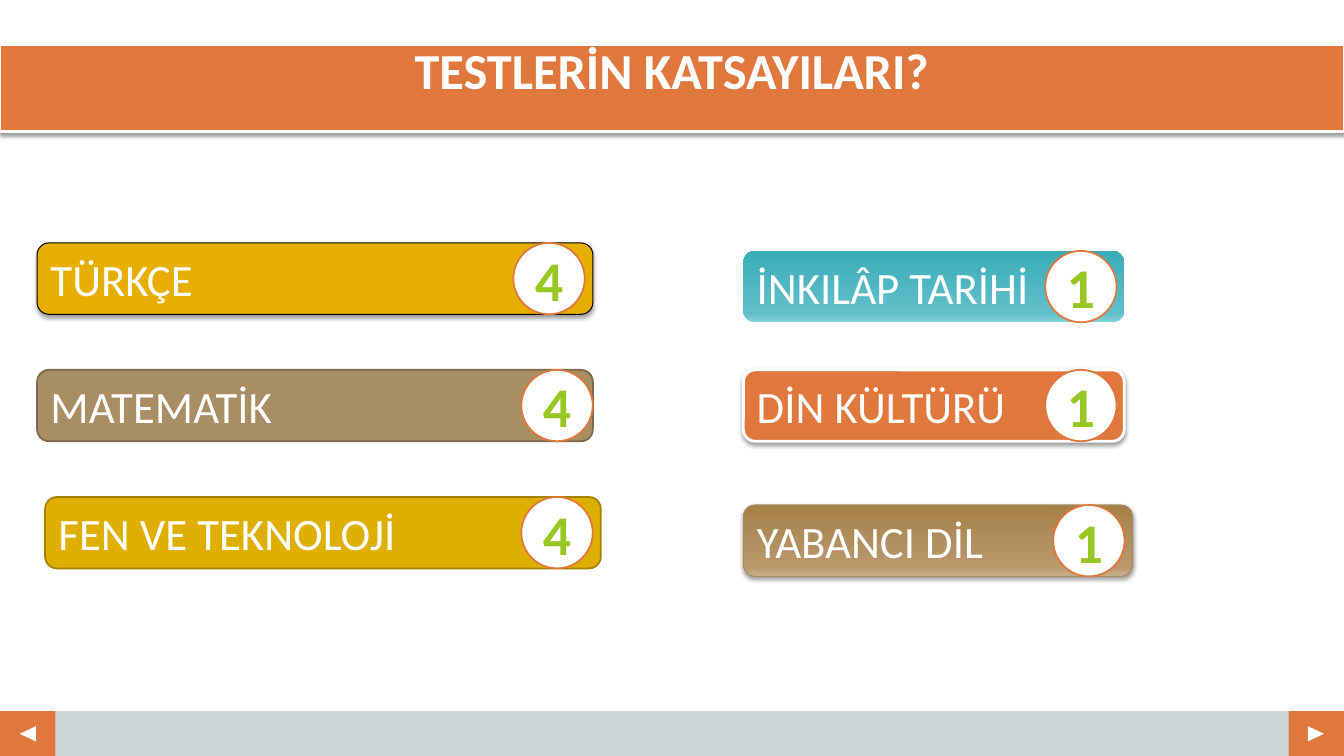
from lxml import etree
from pptx import Presentation
from pptx.dml.color import RGBColor
from pptx.enum.shapes import MSO_SHAPE
from pptx.enum.text import MSO_ANCHOR, MSO_AUTO_SIZE, PP_ALIGN
from pptx.oxml import parse_xml
from pptx.util import Pt

RECTANGLE = MSO_SHAPE.RECTANGLE
TRIANGLE = MSO_SHAPE.ISOSCELES_TRIANGLE
BAR = MSO_SHAPE.FLOWCHART_ALTERNATE_PROCESS
OVAL = MSO_SHAPE.OVAL
MIDDLE, TOP = MSO_ANCHOR.MIDDLE, MSO_ANCHOR.TOP
LEFT, CENTER = PP_ALIGN.LEFT, PP_ALIGN.CENTER

WHITE = RGBColor(0xFF, 0xFF, 0xFF)
BLACK = RGBColor(0x00, 0x00, 0x00)
ORANGE = RGBColor(0xE0, 0x77, 0x3C)
GREY = RGBColor(0xCC, 0xD7, 0xD9)
GREEN = RGBColor(0x98, 0xC7, 0x23)
AMBER = RGBColor(0xE6, 0xAF, 0x00)
TAN = RGBColor(0xA9, 0x8D, 0x63)
DARK_TAN = RGBColor(0x7D, 0x68, 0x49)
GOLD = RGBColor(0xDE, 0xAE, 0x00)
DARK_GOLD = RGBColor(0xA4, 0x81, 0x00)
BROWN_LINE = RGBColor(0xA7, 0x8A, 0x5F)
TEAL_STOPS = (RGBColor(0x85, 0xD2, 0xDC), RGBColor(0x62, 0xBF, 0xCA), RGBColor(0x39, 0xAD, 0xB8))
BROWN_STOPS = (RGBColor(0xCC, 0xB0, 0x8E), RGBColor(0xB9, 0x98, 0x6D), RGBColor(0xA5, 0x80, 0x48))

NAMESPACE = "http://schemas.openxmlformats.org/drawingml/2006/main"
SHADOW_XML = f"""<a:effectLst xmlns:a="{NAMESPACE}">
<a:outerShdw blurRad="{Pt(3.1)}" dist="{Pt(1.6)}" dir="5400000" rotWithShape="0">
<a:srgbClr val="000000"><a:alpha val="38000"/></a:srgbClr></a:outerShdw></a:effectLst>"""


def style(shape, fill, line=None, line_width=0, shadow=False):
    """Set fill (one colour, or three gradient stops from bottom to top), line and shadow."""
    if isinstance(fill, RGBColor):
        shape.fill.solid()
        shape.fill.fore_color.rgb = fill
    else:
        shape.fill.gradient()
        gradient = shape._element.spPr.find(f"{{{NAMESPACE}}}gradFill")
        stops = "".join(
            f'<a:gs pos="{position}"><a:srgbClr val="{color}"/></a:gs>'
            for position, color in zip((0, 12000, 100000), fill))
        gradient.getparent().replace(gradient, parse_xml(
            f'<a:gradFill xmlns:a="{NAMESPACE}" rotWithShape="1"><a:gsLst>{stops}</a:gsLst>'
            '<a:lin ang="16200000" scaled="0"/></a:gradFill>'))
    if line is None:
        shape.line.fill.background()
    else:
        shape.line.color.rgb = line
        shape.line.width = Pt(line_width)
    shape.shadow.inherit = False
    if shadow:
        properties = shape._element.spPr
        effects = properties.find(f"{{{NAMESPACE}}}effectLst")
        properties.replace(effects, parse_xml(SHADOW_XML))


def write(shape, text, size, color, alignment, bold=False):
    frame = shape.text_frame
    frame.text = text
    frame.vertical_anchor = MIDDLE
    paragraph = frame.paragraphs[0]
    paragraph.alignment = alignment
    paragraph.font.name = "Calibri"
    paragraph.font.size = Pt(size)
    paragraph.font.bold = bold
    paragraph.font.color.rgb = color


presentation = Presentation()
presentation.slide_width = Pt(960)
presentation.slide_height = Pt(540)
slide = presentation.slides.add_slide(presentation.slide_layouts[5])

# Title band
title = slide.shapes.title
title.left, title.top, title.width, title.height = Pt(0), Pt(31.8), Pt(960), Pt(62)
style(title, ORANGE, WHITE, 2, shadow=True)
write(title, "TESTLERİN KATSAYILARI?", 36, WHITE, CENTER, bold=True)
title.text_frame.auto_size = MSO_AUTO_SIZE.NONE
title.text_frame.vertical_anchor = TOP
title.text_frame.margin_top = Pt(1.3)
title.text_frame.paragraphs[0].line_spacing = 0.9

# Footer with navigation arrows
footer_parts = [
    (RECTANGLE, 0, 508, 960, 32, 0, GREY),
    (RECTANGLE, 920.4, 508, 39.6, 32, 0, ORANGE),
    (RECTANGLE, 0, 508, 39.6, 32, 0, ORANGE),
    (TRIANGLE, 934.6, 518.4, 10.8, 11.5, 90, WHITE),
    (TRIANGLE, 14.4, 518.4, 10.8, 11.5, 270, WHITE),
]
for kind, left, top, width, height, rotation, color in footer_parts:
    part = slide.shapes.add_shape(kind, Pt(left), Pt(top), Pt(width), Pt(height))
    part.rotation = rotation
    style(part, color)

# Subject bars: name, left, top, width, fill, line, line width, shadow, coefficient, circle left
BAR_HEIGHT = 51
subjects = [
    ("TÜRKÇE", 26.5, 173.5, 397, AMBER, BLACK, 0.75, True, "4", 366.7),
    ("MATEMATİK", 26.5, 264.2, 397, TAN, DARK_TAN, 1.25, False, "4", 372.4),
    ("FEN VE TEKNOLOJİ", 32.2, 355, 397, GOLD, DARK_GOLD, 1.25, False, "4", 372.4),
    ("İNKILÂP TARİHİ", 531, 179.2, 272, TEAL_STOPS, None, 0, False, "1", 746.6),
    ("DİN KÜLTÜRÜ", 531, 264.2, 272, ORANGE, WHITE, 2, True, "1", 746.6),
    ("YABANCI DİL", 531, 360.7, 278, BROWN_STOPS, BROWN_LINE, 0.75, True, "1", 752.3),
]
for name, left, top, width, fill, line, line_width, shadow, coefficient, circle_left in subjects:
    bar = slide.shapes.add_shape(BAR, Pt(left), Pt(top), Pt(width), Pt(BAR_HEIGHT))
    style(bar, fill, line, line_width, shadow)
    write(bar, name, 32, WHITE, LEFT)
    circle = slide.shapes.add_shape(OVAL, Pt(circle_left), Pt(top), Pt(BAR_HEIGHT), Pt(BAR_HEIGHT))
    style(circle, WHITE, ORANGE, 1.25)
    write(circle, coefficient, 40, GREEN, CENTER, bold=True)

presentation.save("out.pptx")
